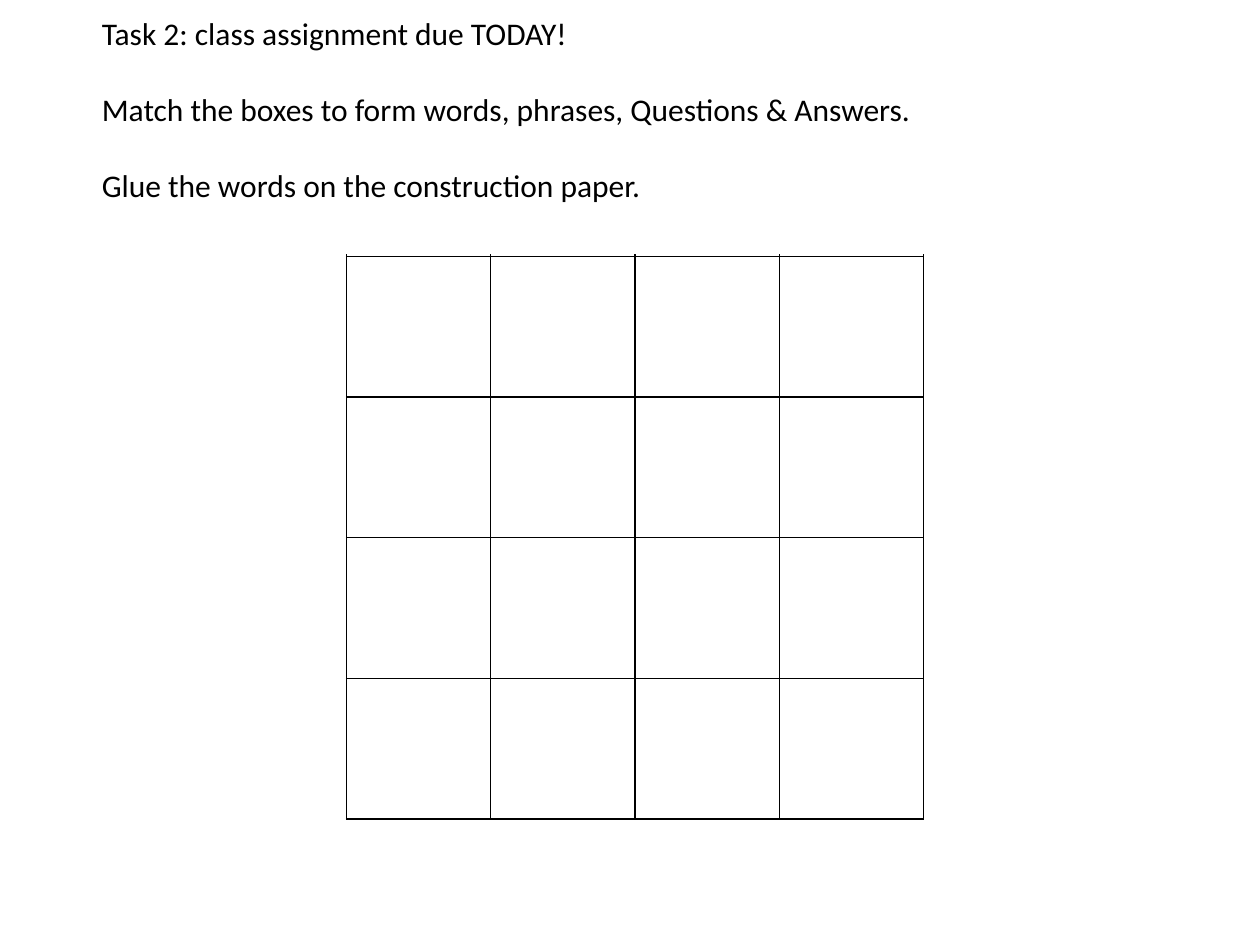
from lxml import etree
from pptx import Presentation
from pptx.dml.color import RGBColor
from pptx.enum.shapes import MSO_SHAPE
from pptx.enum.text import MSO_AUTO_SIZE
from pptx.oxml.ns import qn
from pptx.util import Inches, Pt

RECTANGLE = MSO_SHAPE.RECTANGLE
FIT_SHAPE = MSO_AUTO_SIZE.SHAPE_TO_FIT_TEXT
BLACK = "000000"
WHITE = "FFFFFF"
ROWS, COLUMNS = 5, 4
INSTRUCTIONS = [
    "Task 2: class assignment due TODAY!",
    "Match the boxes to form words, phrases, Questions & Answers.",
    "Glue the words on the construction paper.",
]


def paint(fill, color):
    fill.solid()
    fill.fore_color.rgb = RGBColor.from_string(color)


def add_borders(cell, color, width):
    properties = cell._tc.get_or_add_tcPr()
    for position, side in enumerate(("lnL", "lnR", "lnT", "lnB")):
        line = etree.Element(qn(f"a:{side}"), w=str(width))
        fill = etree.SubElement(line, qn("a:solidFill"))
        etree.SubElement(fill, qn("a:srgbClr"), val=color)
        properties.insert(position, line)


deck = Presentation()
deck.slide_width = Inches(10)
deck.slide_height = Inches(7.5)
page = deck.slides.add_slide(deck.slide_layouts[6])

# Grid of matching boxes
grid = page.shapes.add_table(
    ROWS, COLUMNS, Inches(2.75), Inches(0.92), Inches(4.58), Inches(5.58)
).table
grid.first_row = False
grid.horz_banding = False
for cell in grid.iter_cells():
    paint(cell.fill, WHITE)
    add_borders(cell, BLACK, Pt(1))

# White panel behind the instructions, over the top row of the grid
panel = page.shapes.add_shape(
    RECTANGLE, Inches(2.33), Inches(0.67), Inches(5.58), Inches(1.33)
)
panel.shadow.inherit = False
paint(panel.fill, WHITE)
paint(panel.line.fill, WHITE)
panel.line.width = Pt(2)

# Instructions
box = page.shapes.add_textbox(Inches(0.71), Inches(0.06), Inches(8.83), Inches(1.92))
frame = box.text_frame
frame.word_wrap = True
frame.auto_size = FIT_SHAPE
frame.text = "\n".join(INSTRUCTIONS)
for index, para in enumerate(frame.paragraphs):
    if index:
        para.space_before = Pt(22)
    for span in para.runs:
        span.font.name = "Calibri"
        span.font.size = Pt(18)
        span.font.color.rgb = RGBColor.from_string(BLACK)

deck.save("out.pptx")
